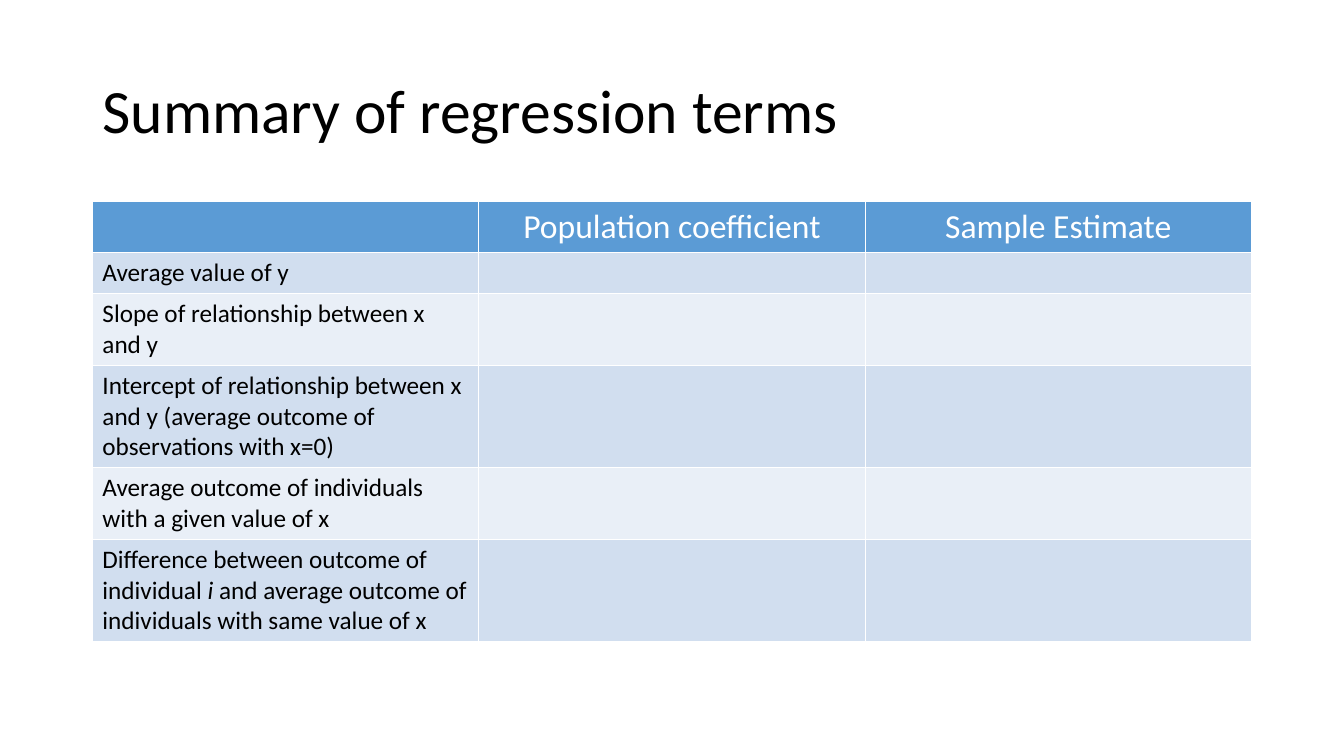
from pptx import Presentation
from pptx.dml.color import RGBColor
from pptx.enum.text import MSO_ANCHOR, MSO_AUTO_SIZE, PP_ALIGN
from pptx.oxml import parse_xml
from pptx.oxml.ns import nsdecls
from pptx.util import Pt

# Content: each row label is a list of (text, italic) runs
TITLE = "Summary of regression terms"
HEADERS = ["", "Population coefficient", "Sample Estimate"]
TERMS = [  # (lines of text, runs)
    (1, [("Average value of y", False)]),
    (2, [("Slope of relationship between x and y", False)]),
    (3, [("Intercept of relationship between x and y "
          "(average outcome of observations with x=0)", False)]),
    (2, [("Average outcome of individuals with a given value of x", False)]),
    (3, [("Difference between outcome of individual ", False), ("i ", True),
         ("and average outcome of individuals with same value of x", False)]),
]

FONT = "Calibri"
BLACK = RGBColor(0x00, 0x00, 0x00)
WHITE = RGBColor(0xFF, 0xFF, 0xFF)
HEADER_BLUE = RGBColor(0x5B, 0x9B, 0xD5)
BANDS = [RGBColor(0xD1, 0xDE, 0xEF), RGBColor(0xE9, 0xEF, 0xF7)]

LEFT, WIDTH = 66, 828
TABLE_TOP = 144
HEADER_HEIGHT = 36.4
LINE_HEIGHT, CELL_PADDING = 22, 7.2
BORDER_WIDTH = 0.96


def format_run(run, size, color, italic=False):
    run.font.name = FONT
    run.font.size = Pt(size)
    run.font.color.rgb = color
    run.font.bold = False
    run.font.italic = italic


def style_cell(cell, color):
    cell.fill.solid()
    cell.fill.fore_color.rgb = color
    properties = cell._tc.get_or_add_tcPr()
    for position, side in enumerate(("lnL", "lnR", "lnT", "lnB")):
        properties.insert(position, parse_xml(
            f'<a:{side} {nsdecls("a")} w="{Pt(BORDER_WIDTH)}"><a:solidFill>'
            f'<a:srgbClr val="{WHITE}"/></a:solidFill></a:{side}>'))


presentation = Presentation()
presentation.slide_width, presentation.slide_height = Pt(960), Pt(540)
slide = presentation.slides.add_slide(presentation.slide_layouts[5])

# Title
title = slide.shapes.title
title.left, title.top, title.width, title.height = Pt(LEFT), Pt(28.8), Pt(WIDTH), Pt(104.4)
title.text_frame.text = TITLE
title.text_frame.vertical_anchor = MSO_ANCHOR.MIDDLE
title.text_frame.auto_size = MSO_AUTO_SIZE.NONE
paragraph = title.text_frame.paragraphs[0]
paragraph.alignment = PP_ALIGN.LEFT
paragraph.line_spacing = 0.9
format_run(paragraph.runs[0], 44, BLACK)

# Table frame
heights = [HEADER_HEIGHT] + [CELL_PADDING + LINE_HEIGHT * lines for lines, _ in TERMS]
table = slide.shapes.add_table(len(heights), len(HEADERS), Pt(LEFT), Pt(TABLE_TOP),
                               Pt(WIDTH), Pt(sum(heights))).table
for column in table.columns:
    column.width = Pt(WIDTH / len(HEADERS))
for index, (row, height) in enumerate(zip(table.rows, heights)):
    row.height = Pt(height)
    for cell in row.cells:
        style_cell(cell, BANDS[(index - 1) % 2] if index else HEADER_BLUE)

# Header text
for cell, text in zip(table.rows[0].cells, HEADERS):
    if text:
        cell.text_frame.text = text
        paragraph = cell.text_frame.paragraphs[0]
        paragraph.alignment = PP_ALIGN.CENTER
        format_run(paragraph.runs[0], 24, WHITE)

# Row labels
for index, (_, runs) in enumerate(TERMS, start=1):
    paragraph = table.cell(index, 0).text_frame.paragraphs[0]
    for text, italic in runs:
        run = paragraph.add_run()
        run.text = text
        format_run(run, 18, BLACK, italic)

presentation.save("out.pptx")
